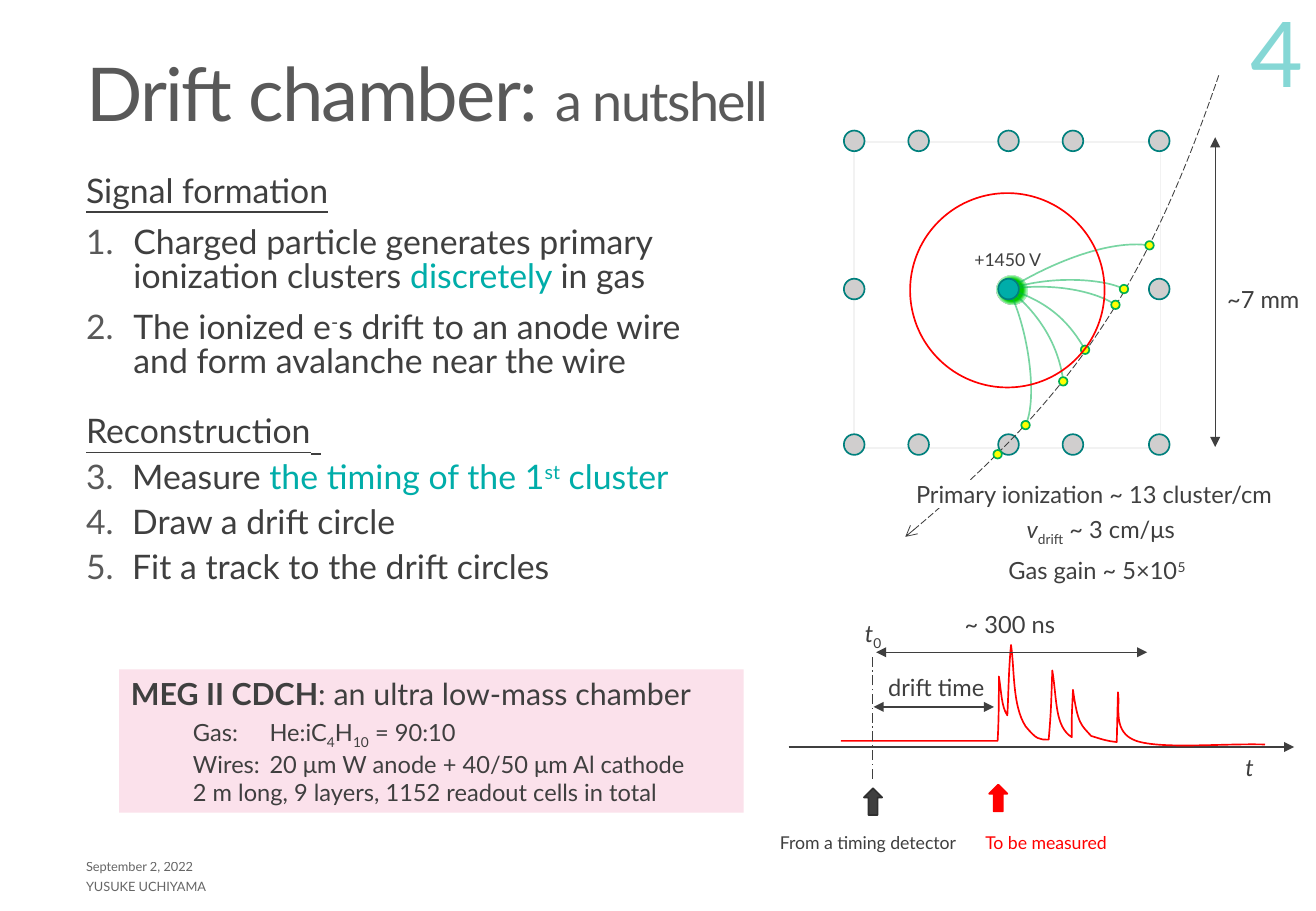
import pptx
import pptx.dml.color
import pptx.enum.dml
import pptx.enum.shapes
import pptx.enum.text
import pptx.oxml.ns
import pptx.util
from dataclasses import dataclass

Inches, Pt, qn = pptx.util.Inches, pptx.util.Pt, pptx.oxml.ns.qn
SHAPE, DASH = pptx.enum.shapes.MSO_SHAPE, pptx.enum.dml.MSO_LINE
ANCHOR, ALIGN = pptx.enum.text.MSO_ANCHOR, pptx.enum.text.PP_ALIGN
BOTH_ENDS = {"head": "triangle", "tail": "triangle"}
SUB, SUPER, ITALIC = {"baseline": -25}, {"baseline": 30}, {"italic": True}

@dataclass(frozen=True)
class Theme:
    font: str = "Lato"
    ink: str = "3F3F3F"
    grey: str = "595959"
    accent: str = "00ADA9"
    wire_line: str = "00807D"
    wire_fill: str = "D0CECE"
    frame: str = "F2F2F2"
    green: str = "00B050"
    yellow: str = "FFFF00"
    red: str = "FF0000"
    pink: str = "FBE1EB"
    white: str = "FFFFFF"
    arrow_edge: str = "2F2F2F"
    avalanche: tuple = ((0, "00CA00"), (43, "00CA00"), (57, "9DF5B2"), (100, "FFFFFF"))
    title: float = 44
    subtitle: float = 32
    page: float = 54
    body: float = 20
    box_title: float = 18
    label: float = 14
    small: float = 10.5
    footer: float = 7.6

THEME = Theme()

def rgb(color):
    return pptx.dml.color.RGBColor.from_string(color)

def add_xml(parent, tag, **attributes):
    child = parent.makeelement(qn(tag), attributes)
    parent.append(child)
    return child

def set_alpha(element, percent):
    for color in element.iter(qn("a:srgbClr")):
        add_xml(color, "a:alpha", val=str(percent * 1000))

def write(paragraph, runs, size, color=THEME.ink):
    """Fill a paragraph with (text, format) runs; format overrides size and color."""
    for text, style in runs:
        run = paragraph.add_run()
        run.text = text
        font = run.font
        font.name, font.size = THEME.font, Pt(style.get("size", size))
        font.color.rgb = rgb(style.get("color", color))
        font.bold, font.italic, font.underline = (style.get(key) for key in ("bold", "italic", "underline"))
        properties = run._r.get_or_add_rPr()
        if "baseline" in style:
            properties.set("baseline", str(style["baseline"] * 1000))
        if "spacing" in style:
            properties.set("spc", str(style["spacing"] * 100))
        if "alpha" in style:
            set_alpha(properties, style["alpha"])
        if "highlight" in style:
            highlight = add_xml(properties, "a:highlight")
            add_xml(highlight, "a:srgbClr", val=style["highlight"])
            properties.find(qn("a:solidFill")).addnext(highlight)

def add_rows(frame, rows):
    """Write (runs, size, line spacing, space before, margin, first-line indent, first number) rows."""
    for index, (runs, size, spacing, before, margin, first, number) in enumerate(rows):
        paragraph = frame.add_paragraph() if index else frame.paragraphs[0]
        paragraph.alignment = ALIGN.LEFT
        paragraph.line_spacing, paragraph.space_before = spacing, Pt(before)
        properties = paragraph._p.get_or_add_pPr()
        properties.set("marL", str(Inches(margin)))
        properties.set("indent", str(Inches(first)))
        write(paragraph, runs, size)
        if number:
            add_xml(add_xml(properties, "a:buClr"), "a:srgbClr", val=THEME.grey)
            add_xml(properties, "a:buFont", typeface=THEME.font)
            add_xml(properties, "a:buAutoNum", type="arabicPeriod", startAt=str(number))

def add_text(slide, left, top, width, height, runs, size, color=THEME.ink, wrap=False,
             anchor=ANCHOR.TOP, align=ALIGN.LEFT):
    frame = slide.shapes.add_textbox(*map(Inches, (left, top, width, height))).text_frame
    frame.word_wrap, frame.vertical_anchor = wrap, anchor
    frame.paragraphs[0].alignment = align
    write(frame.paragraphs[0], [(runs, {})] if isinstance(runs, str) else runs, size, color)
    return frame

def style_line(shape, color, width, dash=None, head=None, tail=None):
    shape.line.color.rgb, shape.line.width = rgb(color), Pt(width)
    if dash:
        shape.line.dash_style = dash
    for tag, kind in (("a:headEnd", head), ("a:tailEnd", tail)):
        if kind:
            add_xml(shape._element.spPr.find(qn("a:ln")), tag, type=kind)

def add_figure(slide, kind, left, top, width, height, fill=None, line=None):
    shape = slide.shapes.add_shape(kind, *map(Inches, (left, top, width, height)))
    shape.shadow.inherit = False
    shape.fill.background()
    shape.line.fill.background()
    if fill:
        shape.fill.solid()
        shape.fill.fore_color.rgb = rgb(fill)
    if line:
        style_line(shape, line, 1)
    return shape

def add_line(slide, x1, y1, x2, y2, **style):
    straight = pptx.enum.shapes.MSO_CONNECTOR.STRAIGHT
    connector = slide.shapes.add_connector(straight, *map(Inches, (x1, y1, x2, y2)))
    style_line(connector, THEME.ink, 0.75, **style)
    add_xml(connector._element.spPr, "a:effectLst")

def add_curve(slide, left, top, start, segments, color, width, **style):
    """Draw segments of one point (straight) or three points (cubic Bézier)."""
    places = [(Inches(left + x), Inches(top + y)) for x, y in [start, *sum(segments, ())]]
    builder = slide.shapes.build_freeform(*places[0])
    builder.add_line_segments(places[1:], close=False)
    shape = builder.convert_to_shape()
    steps = iter(list(shape._element.iter(qn("a:lnTo"))))
    for segment in segments:
        parts = [next(steps) for _ in segment]
        if len(parts) == 3:
            bezier = parts[0].makeelement(qn("a:cubicBezTo"), {})
            parts[0].addprevious(bezier)
            for part in parts:
                bezier.append(part[0])
                part.getparent().remove(part)
    shape.shadow.inherit = False
    shape.fill.background()
    style_line(shape, color, width, **style)
    return shape

def add_heading_and_footer(slide, left):
    runs = [("Drift chamber: ", {"spacing": -1}), ("a nutshell", {"size": THEME.subtitle, "spacing": -1})]
    frame = add_text(slide, left, 0.36, 9.57, 0.9, runs, THEME.title, THEME.grey, True, ANCHOR.MIDDLE)
    frame.paragraphs[0].line_spacing = 0.85
    for top, text in ((7.01, "September 2, 2022"), (7.17, "YUSUKE UCHIYAMA")):
        add_text(slide, left, top, 4.47, 0.25, [(text, {"alpha": 80})], THEME.footer, THEME.ink, True, ANCHOR.MIDDLE)
    add_text(slide, 9.63, 0.02, 1.19, 0.9, [("4", {"alpha": 47})], THEME.page, THEME.accent, True,
             ANCHOR.BOTTOM, ALIGN.RIGHT)

def add_steps(slide, left, top, width, height):
    accent, under, size = {"color": THEME.accent}, {"underline": True}, THEME.body
    early, late = (size, 0.85, 9.6, 0.39, -0.39, 1), (size, 0.85, 6, 0.38, -0.38, 3)
    add_rows(add_text(slide, left, top, width, height, [], size, wrap=True), [
        ([("Signal formation", under)], size, 0.85, 9.6, 0, 0, None),
        ([("Charged particle generates primary ionization clusters ", {}), ("discretely ", accent),
          ("in gas", {})], *early),
        ([("The ionized e", {}), ("-", SUPER), ("s drift to an anode wire and form avalanche near the wire", {})], *early),
        ([("Reconstruction", under), (" ", {**under, "size": 24})], size, 0.85, 18, 0, 0, None),
        ([("Measure ", {}), ("the timing of the 1", accent), ("st", {**accent, **SUPER}), (" cluster", accent)], *late),
        ([("Draw a drift circle", {})], *late),
        ([("Fit a track to the drift circles", {})], *late)])

def add_chamber_box(slide, left, top, width, height):
    frame = add_figure(slide, SHAPE.RECTANGLE, left, top, width, height, THEME.pink).text_frame
    frame.word_wrap, frame.vertical_anchor = True, ANCHOR.TOP
    size = THEME.label
    add_rows(frame, [
        ([("MEG II CDCH", {"bold": True}), (": an ultra low-mass chamber", {})], THEME.box_title, 1, 0, 0, 0, None),
        ([("Gas:\tHe:iC", {}), ("4", SUB), ("H", {}), ("10", SUB), (" = 90:10", {})], size, 1, 3.5, 1.14, -0.63, None),
        ([("Wires:\t20 μm W anode + 40/50 μm Al cathode", {})], size, 1, 0, 1.14, -0.63, None),
        ([("2 m long, 9 layers, 1152 readout cells in total", {})], size, 1, 0, 0.51, 0, None)])

def add_avalanche(slide, left, top):
    glow = add_figure(slide, SHAPE.OVAL, left, top, 0.24, 0.26, THEME.white)
    glow.rotation = 282.1
    gradient = glow._element.spPr.makeelement(qn("a:gradFill"), {"rotWithShape": "1"})
    stops = add_xml(gradient, "a:gsLst")
    for position, color in THEME.avalanche:
        add_xml(add_xml(stops, "a:gs", pos=str(position * 1000)), "a:srgbClr", val=color)
    set_alpha(stops[-1], 33)
    add_xml(add_xml(gradient, "a:path", path="circle"), "a:fillToRect", **dict.fromkeys("ltrb", "50000"))
    glow._element.spPr.replace(glow._element.spPr.find(qn("a:solidFill")), gradient)

def add_drift_cell(slide, left, top, side):
    def add_disc(x, y, size, fill=None, line=None):
        add_figure(slide, SHAPE.OVAL, left + x - size / 2, top + y - size / 2, size, size, fill, line)

    anode = (1.27, 1.21)
    # cluster, then the two control points of its drift path to the anode
    drifts = [((2.43, 0.85), (2.09, 0.8), (1.61, 1)), ((2.22, 1.21), (2.07, 1.13), (1.64, 1.09)),
              ((2.15, 1.34), (2.01, 1.24), (1.66, 1.15)), ((1.9, 1.71), (1.78, 1.5), (1.62, 1.32)),
              ((1.72, 1.97), (1.69, 1.72), (1.56, 1.44)), ((1.41, 2.33), (1.51, 2.12), (1.44, 1.55))]
    add_avalanche(slide, left + 1.18, top + 1.09)
    for cluster, *controls in drifts:
        set_alpha(add_curve(slide, left, top, cluster, [(*controls, anode)], THEME.green, 1)._element.spPr, 53)
    add_figure(slide, SHAPE.RECTANGLE, left, top, side, side, line=THEME.frame)
    columns = (0, 0.53, anode[0], 1.8, 2.51)
    for y, row in ((-0.01, columns), (anode[1], (columns[0], columns[-1])), (2.49, columns)):
        for x in row:
            add_disc(x, y, 0.17, THEME.wire_fill, THEME.wire_line)
    add_disc(*anode, 0.17, THEME.accent, THEME.wire_line)
    add_curve(slide, left, top, (3, -0.55), [((2.4, 1.2), (1.78, 2.12), (0.42, 3.25))],
              THEME.ink, 0.5, dash=DASH.LONG_DASH, tail="arrow")
    for x, y in [drift[0] for drift in drifts] + [(1.18, 2.57)]:
        add_disc(x, y, 0.07, THEME.yellow, THEME.green)
    add_disc(1.26, 1.22, 1.6, line=THEME.red)
    add_line(slide, left + 2.97, top - 0.04, left + 2.97, top + 2.51, **BOTH_ENDS)
    for x, y, width, runs, size in (
            (0.89, 0.83, 1.03, "+1450 V", THEME.small), (2.97, 1.13, 0.83, "~7 mm", THEME.label),
            (0.41, 2.73, 3.3, [("Primary ionization ~ 13 cluster/cm", {"highlight": THEME.white})], THEME.label),
            (1.32, 3.02, 1.47, [("v", ITALIC), ("drift", SUB), (" ~ 3 cm/μs", {})], THEME.label),
            (1.17, 3.36, 1.77, [("Gas gain ~ 5×10", {}), ("5", SUPER)], THEME.label)):
        add_text(slide, left + x, top + y, width, 0.34, runs, size)

def add_signal_plot(slide, left, axis, width):
    """Place the waveform relative to the left end of its time axis."""
    waveform = [
        ((1.72, -0.05),), ((1.73, -0.23), (1.73, -0.4), (1.73, -0.58)), ((1.75, -0.47), (1.75, -0.33), (1.8, -0.26)),
        ((1.81, -0.45), (1.81, -0.63), (1.83, -0.84)), ((1.86, -0.64), (1.84, -0.34), (1.95, -0.17)),
        ((2.04, -0.06), (2.06, -0.06), (2.14, -0.06)), ((2.16, -0.29), (2.16, -0.35), (2.17, -0.63)),
        ((2.21, -0.38), (2.19, -0.17), (2.33, -0.08)), ((2.33, -0.31), (2.33, -0.24), (2.34, -0.47)),
        ((2.38, -0.18), (2.41, -0.18), (2.49, -0.09)), ((2.59, -0.06), (2.61, -0.05), (2.7, -0.04)),
        ((2.71, -0.45),), ((2.73, -0.33), (2.66, -0.12), (2.86, -0.05)), ((3.07, 0.02), (3.57, -0.03), (3.92, -0.02))]
    add_line(slide, left, axis, left + width, axis, tail="triangle")
    add_curve(slide, left, axis, (0.43, -0.05), waveform, THEME.red, 1)
    for start, end, y in ((0.7, 1.69, -0.33), (0.72, 2.95, -0.78)):
        add_line(slide, left + start, axis + y, left + end, axis + y, **BOTH_ENDS)
    add_line(slide, left + 0.69, axis + 0.26, left + 0.69, axis - 0.76, dash=DASH.LONG_DASH_DOT)
    for x, y, text_width, runs, size, color in (
            (3.66, 0, 0.27, [("t", ITALIC)], THEME.label, THEME.ink),
            (0.53, -1.1, 0.34, [("t", ITALIC), ("0", SUB)], THEME.label, THEME.ink),
            (0.72, -0.66, 1, "drift time", THEME.label, THEME.ink),
            (1.35, -1.18, 0.96, "~ 300 ns", THEME.label, THEME.ink),
            (-0.17, 0.65, 1.77, "From a timing detector", THEME.small, THEME.ink),
            (1.52, 0.65, 1.32, "To be measured", THEME.small, THEME.red)):
        add_text(slide, left + x, axis + y, text_width, 0.34, runs, size, color)
    for x, y, fill, line in ((0.62, 0.34, THEME.ink, THEME.arrow_edge), (1.65, 0.31, THEME.red, THEME.red)):
        add_figure(slide, SHAPE.UP_ARROW, left + x, axis + y, 0.15, 0.22, fill, line)

presentation = pptx.Presentation()
presentation.slide_width, presentation.slide_height = Inches(10.83), Inches(7.5)
slide = presentation.slides.add_slide(presentation.slide_layouts[6])
add_heading_and_footer(slide, 0.61)
add_steps(slide, 0.61, 1.4, 5.57, 4.37)
add_drift_cell(slide, 7.03, 1.17, 2.52)
add_signal_plot(slide, 6.49, 6.15, 4.16)
add_chamber_box(slide, 0.98, 5.51, 5.14, 1.18)
presentation.save("out.pptx")
